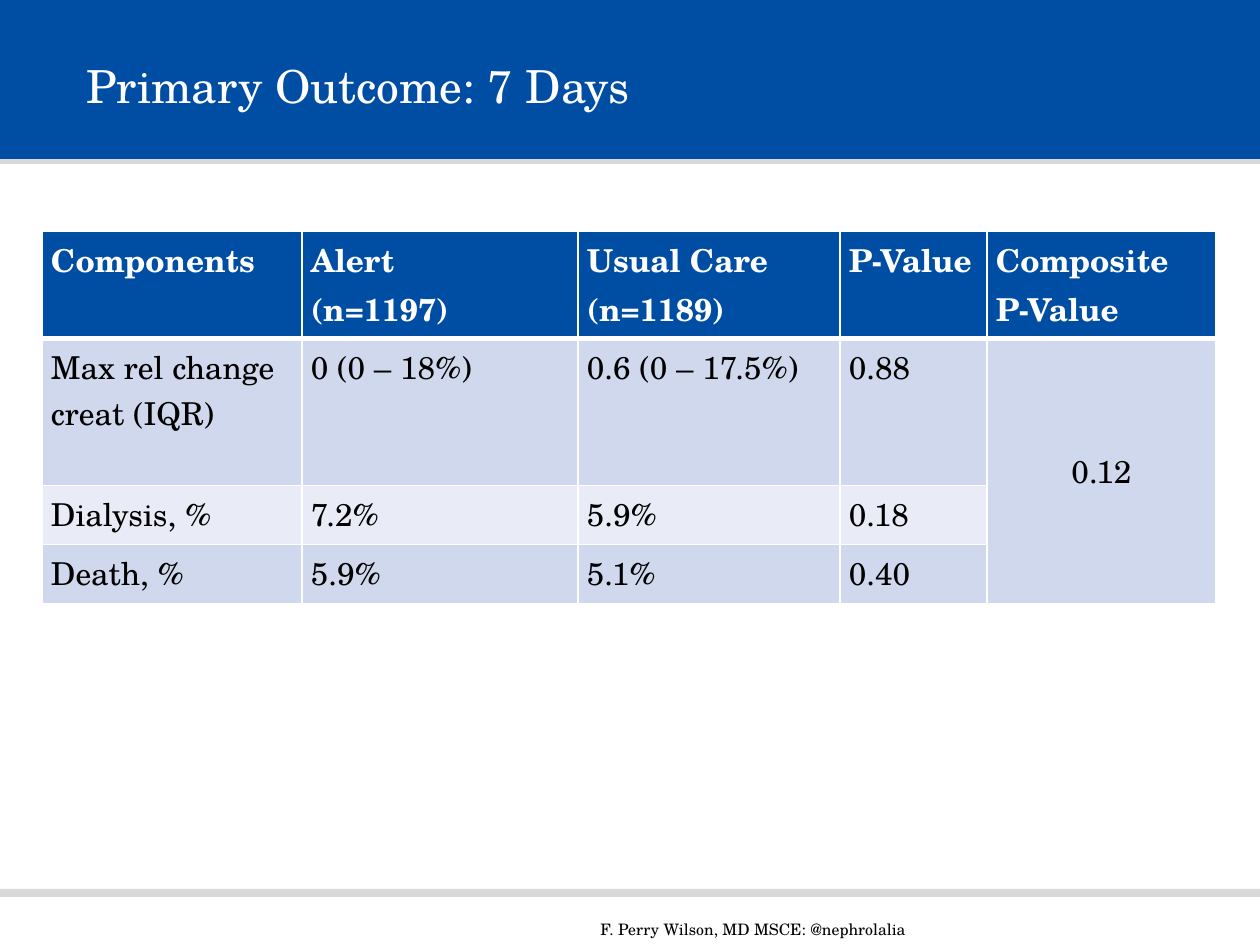
import dataclasses

import pptx
import pptx.dml.color
import pptx.enum.shapes
import pptx.enum.text
import pptx.oxml
import pptx.oxml.ns
import pptx.util

ALIGN = pptx.enum.text.PP_ALIGN
ANCHOR = pptx.enum.text.MSO_ANCHOR
PX = 914400 // 126


@dataclasses.dataclass(frozen=True)
class Theme:
    font: str = "TeX Gyre Schola"
    blue: str = "004DA4"
    grey: str = "DAD9D9"
    band_dark: str = "CFD8EC"
    band_light: str = "E9ECF6"
    white: str = "FFFFFF"
    black: str = "000000"
    title_size: int = 26
    table_size: int = 18
    footer_size: int = 9


def px(*lengths):
    return [length * PX for length in lengths]


def rgb(color):
    return pptx.dml.color.RGBColor.from_string(color)


def write(frame, text, *, font, size, color, bold=False, align=ALIGN.LEFT):
    """Fill a text frame, one paragraph for each line of text."""
    frame.text = text
    for paragraph in frame.paragraphs:
        paragraph.alignment = align
        paragraph.font.name = font
        paragraph.font.size = pptx.util.Pt(size)
        paragraph.font.bold = bold
        paragraph.font.color.rgb = rgb(color)


class SlideBuilder:
    def __init__(self, slide, theme):
        self.slide = slide
        self.theme = theme

    def bar(self, top, height, color):
        """Draw a band across the full slide width."""
        band = self.slide.shapes.add_shape(
            pptx.enum.shapes.MSO_SHAPE.RECTANGLE, *px(0, top, 1260, height))
        band.shadow.inherit = False
        band.fill.solid()
        band.fill.fore_color.rgb = rgb(color)
        band.line.fill.background()

    def title(self, text, left, top, width, height):
        """Place the title placeholder in front of the shapes drawn so far."""
        heading = self.slide.shapes.title
        heading.element.getparent().append(heading.element)
        heading.left, heading.top, heading.width, heading.height = px(left, top, width, height)
        frame = heading.text_frame
        frame.auto_size = pptx.enum.text.MSO_AUTO_SIZE.NONE
        frame.vertical_anchor = ANCHOR.MIDDLE
        write(frame, text, font=self.theme.font, size=self.theme.title_size,
              color=self.theme.white)

    def footer(self, text, left, top, width, height):
        frame = self.slide.shapes.add_textbox(*px(left, top, width, height)).text_frame
        frame.word_wrap = True
        frame.vertical_anchor = ANCHOR.MIDDLE
        write(frame, text, font=self.theme.font, size=self.theme.footer_size,
              color=self.theme.black)

    def borders(self, cell, **widths):
        """Rule the four cell edges L, R, T and B, 1 pt unless given."""
        properties = cell._tc.get_or_add_tcPr()
        for edge in "LRTB":
            width = pptx.util.Pt(widths.get(edge, 1))
            properties.append(pptx.oxml.parse_xml(
                f'<a:ln{edge} {pptx.oxml.ns.nsdecls("a")} w="{width}"><a:solidFill>'
                f'<a:srgbClr val="{self.theme.white}"/></a:solidFill></a:ln{edge}>'))

    def cell(self, cell, text, row):
        header = row == 0
        if header:
            fill = self.theme.blue
            self.borders(cell, B=3)
        else:
            fill = self.theme.band_dark if row % 2 else self.theme.band_light
            self.borders(cell, T=3 if row == 1 else 1)
        cell.fill.solid()
        cell.fill.fore_color.rgb = rgb(fill)
        cell.margin_left, cell.margin_right, cell.margin_top, cell.margin_bottom = px(9, 9, 5, 5)
        if text:
            write(cell.text_frame, text, font=self.theme.font, size=self.theme.table_size,
                  color=self.theme.white if header else self.theme.black, bold=header)

    def table(self, rows, left, top, widths, heights):
        table = self.slide.shapes.add_table(
            len(heights), len(widths), *px(left, top, sum(widths), sum(heights))).table
        for column, width in zip(table.columns, px(*widths)):
            column.width = width
        for row, height in zip(table.rows, px(*heights)):
            row.height = height
        for r, texts in enumerate(rows):
            for c, text in enumerate(texts):
                self.cell(table.cell(r, c), text, r)
        return table

    def merge_centred(self, table, first, last):
        merged = table.cell(*first)
        merged.merge(table.cell(*last))
        merged.vertical_anchor = ANCHOR.MIDDLE
        merged.text_frame.paragraphs[0].alignment = ALIGN.CENTER


OUTCOMES = [
    ["Components", "Alert\n(n=1197)", "Usual Care\n(n=1189)", "P-Value", "Composite P-Value"],
    ["Max rel change creat (IQR)", "0 (0 – 18%)", "0.6 (0 – 17.5%)", "0.88", "0.12"],
    ["Dialysis, %", "7.2%", "5.9%", "0.18", ""],
    ["Death, %", "5.9%", "5.1%", "0.40", ""],
]


def main():
    deck = pptx.Presentation()
    deck.slide_width, deck.slide_height = px(1260, 945)
    theme = Theme()
    builder = SlideBuilder(deck.slides.add_slide(deck.slide_layouts[5]), theme)

    builder.bar(132, 32, theme.grey)
    builder.bar(-1, 160, theme.blue)
    builder.bar(889, 8, theme.grey)
    builder.footer("F. Perry Wilson, MD MSCE: @nephrolalia", 588, 914, 368, 31)
    builder.title("Primary Outcome: 7 Days", 74, 22, 1121, 126)
    outcomes = builder.table(OUTCOMES, 42, 231, widths=[260, 276, 262, 147, 229],
                             heights=[107, 147, 59, 59])
    builder.merge_centred(outcomes, (1, 4), (3, 4))

    deck.save("out.pptx")


if __name__ == "__main__":
    main()
